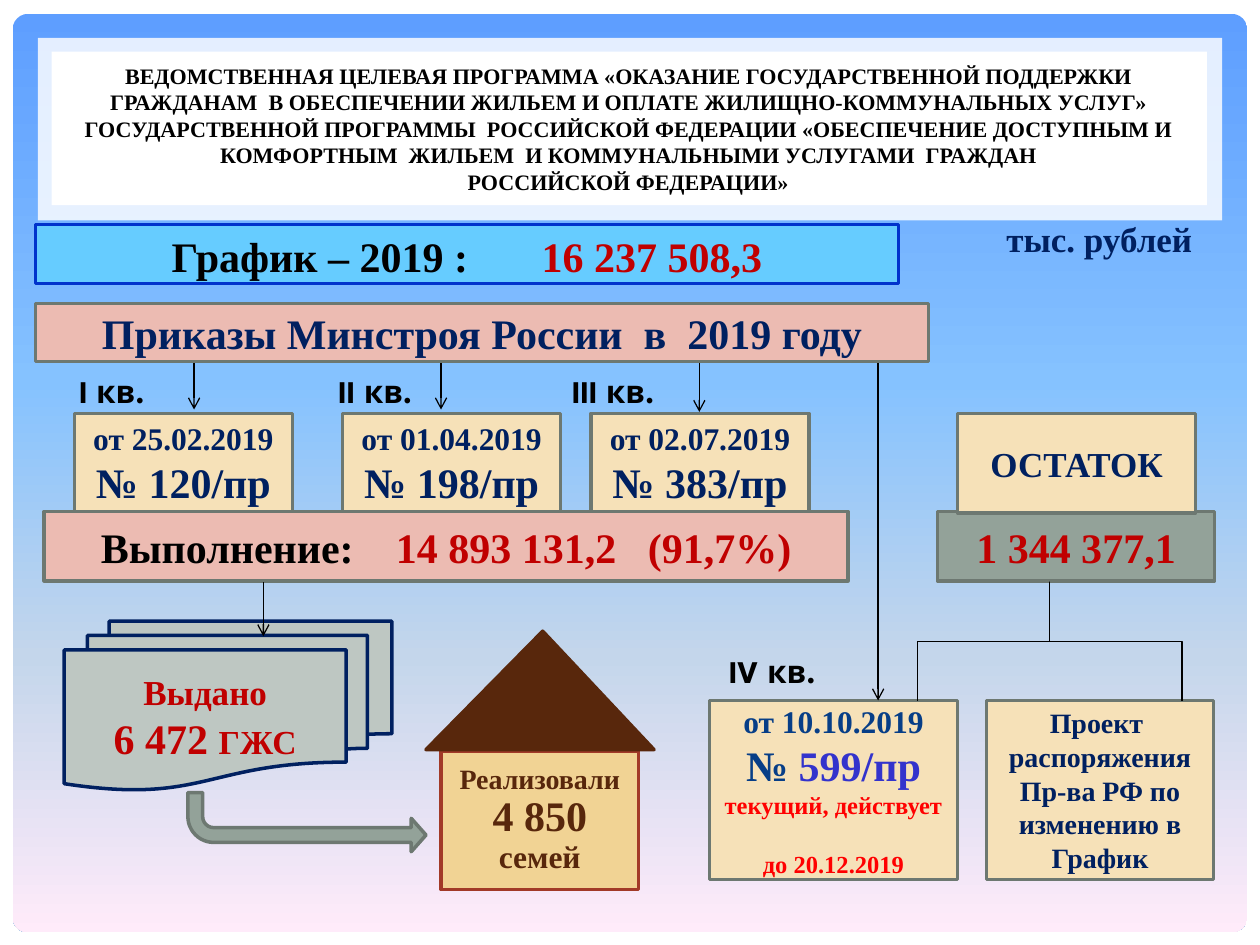
"""Build the slide on the 2019 housing certificate schedule."""
from lxml import etree
from pptx import Presentation
from pptx.dml.color import RGBColor
from pptx.enum import shapes, text
from pptx.oxml import parse_xml
from pptx.oxml.ns import nsdecls, qn
from pptx.util import Pt

S = shapes.MSO_SHAPE


class Theme:
    serif, sans = "Times New Roman", "League Spartan"
    black, white, navy, blue, violet = "000000", "FFFFFF", "002060", "073E87", "3333CC"
    crimson, red, brown, rust = "C00000", "FF0000", "58270C", "A23A28"
    cream, gold, pink, sky, royal = "F6E1B8", "F1D394", "ECBBB2", "66CCFF", "0033CC"
    sage, pale_sage, edge = "93A299", "BEC7C2", "6D7871"
    gradient = [(0, "5E9EFF"), (40, "85C2FF"), (70, "C4D6EB"), (100, "FFEBFA")]
    title, note, small, body, head, big = 12.6, 14, 16, 18, 20, 24
    border, thin = 2, 0.75


T = Theme

TITLE = [
    "ВЕДОМСТВЕННАЯ ЦЕЛЕВАЯ ПРОГРАММА «ОКАЗАНИЕ ГОСУДАРСТВЕННОЙ ПОДДЕРЖКИ "
    "ГРАЖДАНАМ  В ОБЕСПЕЧЕНИИ ЖИЛЬЕМ И ОПЛАТЕ ЖИЛИЩНО-КОММУНАЛЬНЫХ УСЛУГ» "
    "ГОСУДАРСТВЕННОЙ ПРОГРАММЫ  РОССИЙСКОЙ ФЕДЕРАЦИИ «ОБЕСПЕЧЕНИЕ ДОСТУПНЫМ И "
    "КОМФОРТНЫМ  ЖИЛЬЕМ  И КОММУНАЛЬНЫМИ УСЛУГАМИ  ГРАЖДАН",
    "РОССИЙСКОЙ ФЕДЕРАЦИИ»",
]
ORDERS = [
    (42.5, "от 25.02.2019", "№ 120/пр"),
    (195.8, "от 01.04.2019", "№ 198/пр"),
    (337.7, "от 02.07.2019", "№ 383/пр"),
]
QUARTERS = [
    ("I кв.", (36.7, 207.4, 54.7, 31.7)),
    ("II кв.", (178.6, 207.4, 72, 31.7)),
    ("III кв.", (314.6, 207.4, 72, 31.7)),
    ("IV кв.", (405.4, 372.2, 72, 22.3)),
]
ARROWS = [(110.9, 207.4, 234), (252, 207.4, 234), (399.6, 207.4, 235.4),
          (501.8, 207.4, 400.3), (150.5, 332.6, 363.6)]
SCHEDULE = [[("График – 2019 :", {"color": T.black}), (" ", {"spc": 36}), "16 237 508,3"]]
DONE = [[("Выполнение:", {"color": T.black}), (" ", {"spc": 18}), "14 893 131,2",
         (" ", {"spc": 12}), "(91,7%)"]]
ISSUED = [[("Выдано", {"size": T.head})], ["6 472 ", ("гжс", {"cap": "small"})]]
USED = [[("Реализовали", {"size": T.small})], ["4 850"], [("семей", {"size": T.body})]]
CURRENT = [
    [("от 10.10.2019", {"size": T.body})],
    ["№ ", ("599/пр", {"color": T.violet})],
    [("текущий, действует", {"size": T.note, "color": T.red})],
    [("до 20.12.2019", {"size": T.note, "color": T.red})],
]
DRAFT = [["Проект  распоряжения Пр-ва РФ по изменению в График"]]


def write(sp, paras, size=T.big, color=T.navy, font=T.serif, top=False, spacing=None):
    tf = sp.text_frame
    tf.word_wrap = True
    tf.vertical_anchor = text.MSO_ANCHOR.TOP if top else text.MSO_ANCHOR.MIDDLE
    for i, runs in enumerate(paras):
        p = tf.add_paragraph() if i else tf.paragraphs[0]
        p.alignment = text.PP_ALIGN.CENTER
        if spacing:
            p.line_spacing = spacing
        for run in runs:
            words, fmt = (run, {}) if isinstance(run, str) else run
            r = p.add_run()
            r.text = words
            r.font.name, r.font.bold = font, True
            r.font.size = Pt(fmt.get("size", size))
            r.font.color.rgb = RGBColor.from_string(fmt.get("color", color))
            if "spc" in fmt:
                r.font._element.set("spc", str(fmt["spc"] * 100))
            if "cap" in fmt:
                r.font._element.set("cap", fmt["cap"])
    return tf


def add_shape(slide, box, fill=None, line=None, kind=S.RECTANGLE, width=T.border, adj=()):
    sp = slide.shapes.add_shape(kind, *map(Pt, box))
    sp.shadow.inherit = False
    for i, value in enumerate(adj):
        sp.adjustments[i] = value
    if fill:
        sp.fill.solid()
        sp.fill.fore_color.rgb = RGBColor.from_string(fill)
    else:
        sp.fill.background()
    if line:
        sp.line.color.rgb = RGBColor.from_string(line)
        sp.line.width = Pt(width)
    else:
        sp.line.fill.background()
    return sp


def add_label(slide, box, paras, **fmt):
    return write(slide.shapes.add_textbox(*map(Pt, box)), paras, **fmt)


def add_arrow(slide, x, top, bottom):
    c = slide.shapes.add_connector(shapes.MSO_CONNECTOR.STRAIGHT, Pt(x), Pt(top), Pt(x), Pt(bottom))
    c.line.color.rgb = RGBColor.from_string(T.black)
    c.line.width = Pt(T.thin)
    etree.SubElement(c.line._get_or_add_ln(), qn("a:tailEnd"), type="arrow")
    etree.SubElement(c._element.spPr, qn("a:effectLst"))


def add_backdrop(slide):
    slide.background.fill.solid()
    slide.background.fill.fore_color.rgb = RGBColor.from_string(T.white)
    panel = add_shape(slide, (7.2, 7.9, 705.6, 524.9), kind=S.ROUNDED_RECTANGLE, adj=[0.017])
    stops = "".join(f'<a:gs pos="{pos * 1000}"><a:srgbClr val="{c}"/></a:gs>' for pos, c in T.gradient)
    grad = parse_xml(f'<a:gradFill {nsdecls("a")} rotWithShape="1"><a:gsLst>{stops}</a:gsLst>'
                     '<a:lin ang="5400000" scaled="0"/></a:gradFill>')
    pr = panel._element.spPr
    pr.replace(pr.find(qn("a:noFill")), grad)
    frame = add_shape(slide, (21.6, 21.6, 676.8, 104.4), T.white)
    clr = frame._element.spPr.find(".//" + qn("a:srgbClr"))
    etree.SubElement(clr, qn("a:alpha"), val="83000")
    add_shape(slide, (29.5, 29.5, 660.2, 87.8), T.white)


def main():
    prs = Presentation()
    prs.slide_width, prs.slide_height = Pt(720), Pt(540)
    slide = prs.slides.add_slide(prs.slide_layouts[6])
    add_backdrop(slide)
    add_label(slide, (33.8, 32.4, 650.2, 82.1), [[line] for line in TITLE],
              size=T.title, color=T.black, spacing=Pt(15.2))

    for x, date, number in ORDERS:
        sp = add_shape(slide, (x, 236.2, 124.6, 56.9), T.cream, T.edge)
        write(sp, [[(date, {"size": T.body})], [number]])
    write(add_shape(slide, (20.2, 173.5, 510.5, 33.1), T.pink, T.edge),
          [["Приказы Минстроя России  в  2019 году"]])
    write(add_shape(slide, (36.7, 355, 187.2, 96.5), T.pale_sage, T.navy, S.FLOWCHART_MULTIDOCUMENT),
          ISSUED, color=T.crimson)
    tf = write(add_shape(slide, (405.4, 400.3, 141.8, 102.2), T.cream, T.edge), CURRENT, color=T.blue)
    tf.paragraphs[-1].space_before = Pt(17)
    for quarter, box in QUARTERS:
        add_label(slide, box, [[quarter]], size=T.body, color=T.black, font=T.sans)
    write(add_shape(slide, (20.2, 128.2, 493.2, 33.8), T.sky, T.royal), SCHEDULE,
          color=T.crimson, top=True)
    write(add_shape(slide, (25.2, 292.3, 459.4, 39.6), T.pink, T.edge), DONE, color=T.crimson)
    for arrow in ARROWS:
        add_arrow(slide, *arrow)

    write(add_shape(slide, (535.7, 292.3, 158.4, 39.6), T.sage, T.edge), [["1 344 377,1"]],
          color=T.crimson)
    write(add_shape(slide, (547.2, 236.2, 136.1, 56.9), T.cream, T.edge), [["ОСТАТОК"]], size=T.head)
    write(add_shape(slide, (252, 429.1, 113, 79.2), T.gold, T.rust), USED, color=T.brown, spacing=0.9)
    add_shape(slide, (243.4, 360.7, 130.3, 67.7), T.brown, T.brown, S.ISOSCELES_TRIANGLE, adj=[0.512])
    bent = add_shape(slide, (107.3, 452.9, 136.1, 33.8), T.sage, T.edge, S.BENT_ARROW,
                     adj=[0.25, 0.283, 0.25, 0.438])
    bent.rotation = 180
    bent._element.spPr.xfrm.set("flipH", "1")
    write(add_shape(slide, (563.8, 400.3, 129.6, 102.2), T.cream, T.edge), DRAFT, size=T.small)
    brace = add_shape(slide, (565.9, 290.9, 67.7, 151.2), None, T.black, S.LEFT_BRACE, T.thin, [0, 0.5])
    brace.rotation = 90
    add_label(slide, (558.7, 116.6, 139, 39.6), [["тыс. рублей"]], size=T.head)
    prs.save("out.pptx")


if __name__ == "__main__":
    main()
